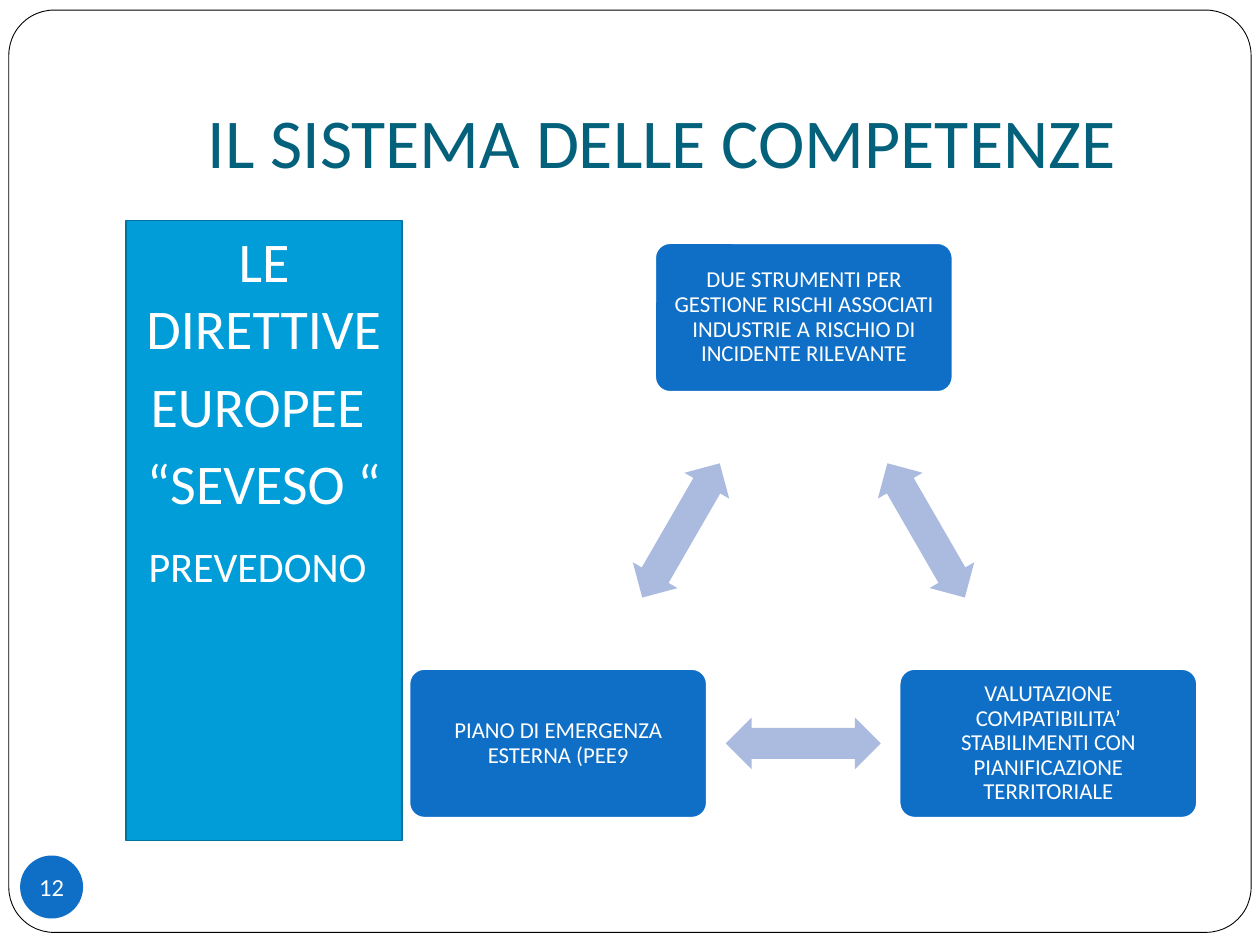
import math
from dataclasses import dataclass
from itertools import pairwise

from pptx import Presentation
from pptx.dml.color import RGBColor
from pptx.enum import shapes, text
from pptx.util import Inches, Pt

Shape = shapes.MSO_SHAPE
Anchor = text.MSO_ANCHOR


@dataclass(frozen=True)
class Theme:
    font: str = "Calibri"
    white: str = "FFFFFF"
    frame: str = "000000"
    title: str = "04617B"
    panel: str = "009DD9"
    panel_edge: str = "0074A1"
    box: str = "0F6FC6"
    arrow: str = "ABBBDF"
    title_size: int = 40
    panel_size: int = 32
    verb_size: int = 24
    number_size: int = 14
    box_size: int = 13


@dataclass(frozen=True)
class Node:
    label: str
    x: float  # centre
    y: float


THEME = Theme()
BOX_WIDTH, BOX_HEIGHT = 2.36, 1.18
ARROW_WIDTH, ARROW_HEIGHT = 1.23, 0.41
NODES = [
    Node("DUE STRUMENTI PER GESTIONE RISCHI ASSOCIATI INDUSTRIE A RISCHIO DI "
         "INCIDENTE RILEVANTE", 6.38, 2.52),
    Node("VALUTAZIONE COMPATIBILITA’ STABILIMENTI CON PIANIFICAZIONE TERRITORIALE",
         8.32, 5.9),
    Node("PIANO DI EMERGENZA ESTERNA (PEE9", 4.43, 5.9),
]


def add_block(slide, kind, left: float, top: float, width: float, height: float,
              fill: str, edge: str | None = None, edge_width: float = 1):
    block = slide.shapes.add_shape(
        kind, Inches(left), Inches(top), Inches(width), Inches(height))
    block.shadow.inherit = False
    block.fill.solid()
    block.fill.fore_color.rgb = RGBColor.from_string(fill)
    if edge:
        block.line.color.rgb = RGBColor.from_string(edge)
        block.line.width = Pt(edge_width)
    else:
        block.line.fill.background()
    return block


def set_frame(frame, anchor, inset: float) -> None:
    frame.word_wrap = True
    frame.vertical_anchor = anchor
    frame.margin_left = frame.margin_right = Inches(inset)
    frame.margin_top = frame.margin_bottom = Inches(inset)


def style_runs(paragraph, size: int, color: str) -> None:
    paragraph.alignment = text.PP_ALIGN.CENTER
    for run in paragraph.runs:
        run.font.name = THEME.font
        run.font.size = Pt(size)
        run.font.color.rgb = RGBColor.from_string(color)


def add_title(slide) -> None:
    title = slide.shapes.title
    title.left, title.top = Inches(1), Inches(0.3)
    title.width, title.height = Inches(8.5), Inches(1.25)
    frame = title.text_frame
    frame.text = "IL SISTEMA DELLE COMPETENZE"
    set_frame(frame, Anchor.BOTTOM, 0.1)
    frame.margin_top = Inches(0.05)
    style_runs(frame.paragraphs[0], THEME.title_size, THEME.title)


def add_directives_panel(slide) -> None:
    panel = add_block(slide, Shape.RECTANGLE, 1, 1.75, 2.19, 4.92,
                      THEME.panel, THEME.panel_edge)
    frame = panel.text_frame
    frame.text = "LE DIRETTIVE\nEUROPEE \n“SEVESO “\nPREVEDONO"
    set_frame(frame, Anchor.TOP, 0.1)
    frame.margin_top = frame.margin_bottom = Inches(0.05)
    verb = frame.paragraphs[-1]
    verb.add_run().text = " "
    for index, paragraph in enumerate(frame.paragraphs):
        style_runs(paragraph, THEME.panel_size, THEME.white)
        if index:
            paragraph.space_before = Pt(5.8)
    verb.runs[0].font.size = Pt(THEME.verb_size)


def add_page_number(slide) -> None:
    badge = add_block(slide, Shape.OVAL, 0.16, 6.79, 0.5, 0.5, THEME.box)
    badge.text_frame.text = "12"
    set_frame(badge.text_frame, Anchor.MIDDLE, 0)
    badge.text_frame.word_wrap = False
    style_runs(badge.text_frame.paragraphs[0], THEME.number_size, THEME.white)


def add_node(slide, node: Node) -> None:
    box = add_block(slide, Shape.ROUNDED_RECTANGLE, node.x - BOX_WIDTH / 2,
                    node.y - BOX_HEIGHT / 2, BOX_WIDTH, BOX_HEIGHT,
                    THEME.box, THEME.white)
    box.adjustments[0] = 0.1
    box.text_frame.text = node.label
    set_frame(box.text_frame, Anchor.MIDDLE, 0.05)
    label = box.text_frame.paragraphs[0]
    label.line_spacing = 0.9
    style_runs(label, THEME.box_size, THEME.white)


def add_link(slide, start: Node, end: Node) -> None:
    """Place a double arrow midway between two nodes, along their axis."""
    arrow = add_block(slide, Shape.LEFT_RIGHT_ARROW,
                      (start.x + end.x - ARROW_WIDTH) / 2,
                      (start.y + end.y - ARROW_HEIGHT) / 2,
                      ARROW_WIDTH, ARROW_HEIGHT, THEME.arrow)
    arrow.adjustments[0], arrow.adjustments[1] = 0.6, 0.5
    arrow.rotation = round(math.degrees(
        math.atan2(end.y - start.y, end.x - start.x))) % 360


def main() -> None:
    deck = Presentation()
    deck.slide_width, deck.slide_height = Inches(10), Inches(7.5)
    slide = deck.slides.add_slide(deck.slide_layouts[5])

    # Page frame, sent behind the title
    border = add_block(slide, Shape.ROUNDED_RECTANGLE, 0.07, 0.08, 9.86, 7.32,
                       THEME.white, THEME.frame, 0.5)
    border.adjustments[0] = 0.049
    slide.shapes.title.element.addprevious(border.element)

    # Heading, side panel and page number
    add_title(slide)
    add_directives_panel(slide)
    add_page_number(slide)

    # Cycle of instruments
    for node in NODES:
        add_node(slide, node)
    for start, end in pairwise(NODES + NODES[:1]):
        add_link(slide, start, end)

    deck.save("out.pptx")


if __name__ == "__main__":
    main()
